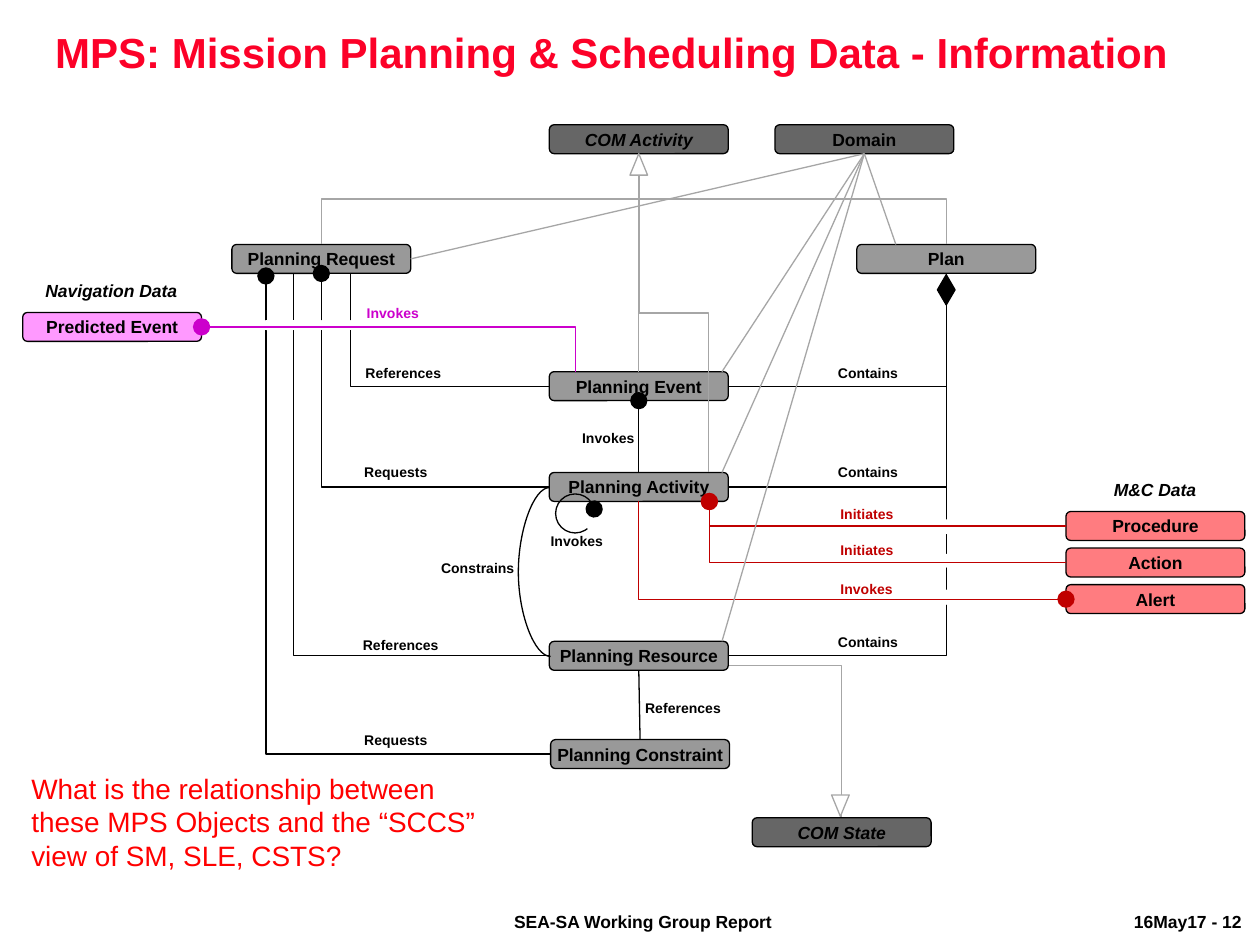
"""Builds the mission planning and scheduling information model slide."""
from lxml import etree
from pptx import Presentation
from pptx.dml.color import RGBColor
from pptx.enum import shapes as sh, text as tx
from pptx.oxml.ns import qn
from pptx.util import Inches, Pt

HUE = {"black": "000000", "white": "FFFFFF", "title": "FC0128", "ask": "FF0000",
       "dark": "666666", "mid": "999999", "pale": "A6A6A6", "rose": "FF7C80",
       "pink": "FF99FF", "red": "C00000", "plum": "CC00CC"}
WIDE, HIGH = 1.42, 0.23
TOP, LEFT, LOW, RIGHT = range(4)

BOXES = {
    "Plan": (6.8, 1.94, "mid"),
    "Planning Request": (1.84, 1.94, "mid"),
    "Planning Activity": (4.36, 3.75, "mid"),
    "Planning Event": (4.36, 2.95, "mid"),
    "Planning Resource": (4.36, 5.09, "mid"),
    "Planning Constraint": (4.37, 5.87, "mid"),
    "Procedure": (8.46, 4.06, "rose"),
    "Action": (8.46, 4.35, "rose"),
    "Alert": (8.46, 4.64, "rose"),
    "Predicted Event": (0.18, 2.48, "pink"),
    "COM Activity": (4.36, 0.99, "dark"),
    "COM State": (5.97, 6.49, "dark"),
    "Domain": (6.15, 0.99, "dark"),
}
PLAN, ASK, ACT, EVENT, RES, CON = [
    n for n in BOXES if n.startswith("Plan")]
STATE = ((5.18, 5.28), ("COM State", TOP), "pale", "")
LINKS = [
    ((2.78, 2.17), (EVENT, LEFT), "black", "", "down"),
    ((PLAN, LOW), (EVENT, RIGHT), "black", "", "down"),
    ((PLAN, LOW), (ACT, RIGHT), "black", "", "down"),
    ((PLAN, LOW), (RES, RIGHT), "black", "", "down"),
    ((ACT, LEFT), (ASK, LOW), "black", "tailEnd"),
    ((2.33, 2.17), (RES, LEFT), "black", "", "down"),
    ((CON, LEFT), (2.11, 2.19), "black", "tailEnd"),
]
CALLS = [
    (("Procedure", LEFT), (5.63, 3.98), "red", "tailEnd"),
    (("Action", LEFT), (5.63, 3.98), "red", "tailEnd"),
    ((ACT, LOW), ("Alert", LEFT), "red", "tailEnd", "down"),
    (("Predicted Event", RIGHT), (4.57, 2.95), "plum", "headEnd"),
]
KINDS = [
    (("COM Activity", LOW), end, "pale", "", "down", 3)
    for end in [(ASK, TOP), (PLAN, TOP), (5.62, 3.75)]]
LINES = [
    ((CON, TOP), (RES, LOW), "black", ""),
    ((ACT, TOP), (EVENT, LOW), "black", "tailEnd"),
    (("COM Activity", LOW), (EVENT, TOP), "pale", ""),
] + [(("Domain", LOW), end, "pale", "") for end in [
    (7.11, 1.94), (5.73, 2.95), (5.73, 3.75), (5.73, 5.09), (ASK, RIGHT)]]
GAPS = [(x, 2.54, 0.09, 0.08) for x in (2.07, 2.28, 2.5, 2.73)] + [
    (7.46, 4.12, 0.12, 0.12), (7.43, 4.39, 0.12, 0.12), (7.45, 4.68, 0.12, 0.12)]
TAGS = {
    ("Requests", "black", 0.51): [(2.89, 3.68), (2.89, 5.81)],
    ("Invokes", "black", 0.42): [(4.37, 4.23), (4.62, 3.41)],
    ("Invokes", "plum", 0.42): [(2.91, 2.42)],
    ("Invokes", "red", 0.42): [(6.67, 4.61)],
    ("References", "black", 0.61): [(2.9, 2.89), (2.88, 5.05), (5.12, 5.55)],
    ("Contains", "black", 0.48): [(6.65, 2.89), (6.65, 3.68), (6.65, 5.03)],
    ("Initiates", "red", 0.43): [(6.67, 4.01), (6.67, 4.3)],
    ("Constrains", "black", 0.59): [(3.5, 4.44)],
}
HEADS = [("Navigation Data", 0.36, 2.22, 1.06), ("M&C Data", 8.84, 3.8, 0.66)]
FEET = [("16May17 - 12", 8.91, 1.06), ("SEA-SA Working Group Report", 3.99, 2.26)]
TITLE = "MPS: Mission Planning & Scheduling Data - Information"
QUERY = ("What is the relationship between these MPS Objects "
         "and the “SCCS” view of SM, SLE, CSTS?")

deck = Presentation()
deck.slide_width, deck.slide_height = Inches(10), Inches(7.5)
page = deck.slides.add_slide(deck.slide_layouts[6])
made = {}


def rgb(hue):
    return RGBColor.from_string(HUE[hue])


def write(item, words, size, hue="black", bold=True, slant=False,
          pad=(0, 0), wrap=False, align=tx.PP_ALIGN.LEFT):
    frame = item.text_frame
    frame.text = words
    frame.word_wrap = wrap
    frame.margin_left = frame.margin_right = Inches(pad[0])
    frame.margin_top = frame.margin_bottom = Inches(pad[1])
    para = frame.paragraphs[0]
    para.alignment = align
    font = para.runs[0].font
    font.name, font.size, font.bold, font.italic = "Arial", Pt(size), bold, slant
    font.color.rgb = rgb(hue)
    return para


def label(words, x, y, w, h, size, **look):
    item = page.shapes.add_textbox(*map(Inches, (x, y, w, h)))
    return write(item, words, size, **look)


def draw(kind, x, y, w, h, fill=None, line=None):
    item = page.shapes.add_shape(kind, *map(Inches, (x, y, w, h)))
    item.shadow.inherit = False
    if fill:
        item.fill.solid()
        item.fill.fore_color.rgb = rgb(fill)
    else:
        item.fill.background()
    if line:
        item.line.color.rgb = rgb(line)
        item.line.width = Pt(0.75)
    else:
        item.line.fill.background()
    return item


def spot(end):
    if end[0] not in BOXES:
        return end
    x, y, _ = BOXES[end[0]]
    dx, dy = [(0.5, 0), (0, 0.5), (0.5, 1), (1, 0.5)][end[1]]
    return x + dx * WIDE, y + dy * HIGH


def dot(item, tip):
    line = item.line._get_or_add_ln()
    etree.SubElement(line, qn("a:" + tip), type="oval", w="lg", len="lg")


def wire(kind, a, b, hue, tip=""):
    item = page.shapes.add_connector(kind, *map(Inches, a + b))
    item.line.color.rgb = rgb(hue)
    item.line.width = Pt(0.75)
    if tip:
        dot(item, tip)
    etree.SubElement(item._element.spPr, qn("a:effectLst"))
    return item


def bend(start, end, hue, tip, way="across", legs=2):
    (ax, ay), (bx, by) = spot(start), spot(end)
    w, h = abs(bx - ax), abs(by - ay)
    mx, my = (ax + bx) / 2, (ay + by) / 2
    if way == "down":
        w, h = h, w
        turn = 90 if bx < ax else 270
    else:
        turn = 0 if bx > ax else 180
    item = wire(sh.MSO_CONNECTOR.ELBOW, (mx - w / 2, my - h / 2),
                (mx + w / 2, my + h / 2), hue, tip)
    form = item._element.spPr
    form.find(qn("a:prstGeom")).set("prst", f"bentConnector{legs}")
    box = form.find(qn("a:xfrm"))
    box.set("rot", str(turn * 60000))
    if turn == 270:
        box.set("flipH", "1")


def join(start, end, hue, tip):
    item = wire(sh.MSO_CONNECTOR.STRAIGHT, spot(start), spot(end), hue, tip)
    if start[0] in made:
        item.begin_connect(made[start[0]], start[1])
    if end[0] in made:
        item.end_connect(made[end[0]], end[1])


Form = sh.MSO_SHAPE
title = label(TITLE, 0.2, 0.21, 9.31, 0.55, 24, hue="title", pad=(0.1, 0.05),
              wrap=True, align=tx.PP_ALIGN.CENTER)
title.line_spacing = 0.9
for words, x, w in FEET:
    label(words, x, 7.19, w, 0.26, 10, pad=(0.09, 0.04))

bend(*STATE)
for name, (x, y, fill) in BOXES.items():
    made[name] = draw(Form.ROUNDED_RECTANGLE, x, y, WIDE, HIGH, fill, "black")
    write(made[name], name, 10, slant=name.startswith("COM"), pad=(0.02, 0.02),
          wrap=True, align=tx.PP_ALIGN.CENTER)
    made[name].text_frame.vertical_anchor = tx.MSO_ANCHOR.MIDDLE

for link in LINKS:
    bend(*link)
for gap in GAPS:
    draw(Form.OVAL, *gap, "white")
for link in CALLS + KINDS:
    bend(*link)
for line in LINES:
    join(*line)

curve = wire(sh.MSO_CONNECTOR.CURVE, (4.36, 3.87), (4.37, 5.21), "black")
bow = curve._element.spPr.find(qn("a:prstGeom")).find(qn("a:avLst"))
etree.SubElement(bow, qn("a:gd"), name="adj1", fmla="val -2500000")

loop = draw(Form.ARC, 4.41, 3.92, 0.31, 0.31, line="black")
for i, angle in enumerate((193.23, 128.87)):
    loop.adjustments[i] = angle * 0.6
loop._element.spPr.find(qn("a:xfrm")).set("flipH", "1")
dot(loop, "headEnd")

draw(Form.FLOWCHART_DECISION, 7.39, 2.23, 0.24, 0.14, "black", "black").rotation = 270
draw(Form.ISOSCELES_TRIANGLE, 5, 1.22, 0.14, 0.17, "white", "pale")
down = draw(Form.ISOSCELES_TRIANGLE, 6.6, 6.31, 0.14, 0.17, "white", "pale")
down._element.spPr.find(qn("a:xfrm")).set("flipV", "1")

for (words, hue, w), spots in TAGS.items():
    for x, y in spots:
        label(words, x, y, w, 0.13, 8, hue=hue)
for words, x, y, w in HEADS:
    label(words, x, y, w, 0.17, 10, slant=True)
label(QUERY, 0.15, 6.07, 3.82, 0.91, 16, hue="ask", bold=False,
      pad=(0.1, 0.05), wrap=True)
deck.save("out.pptx")
